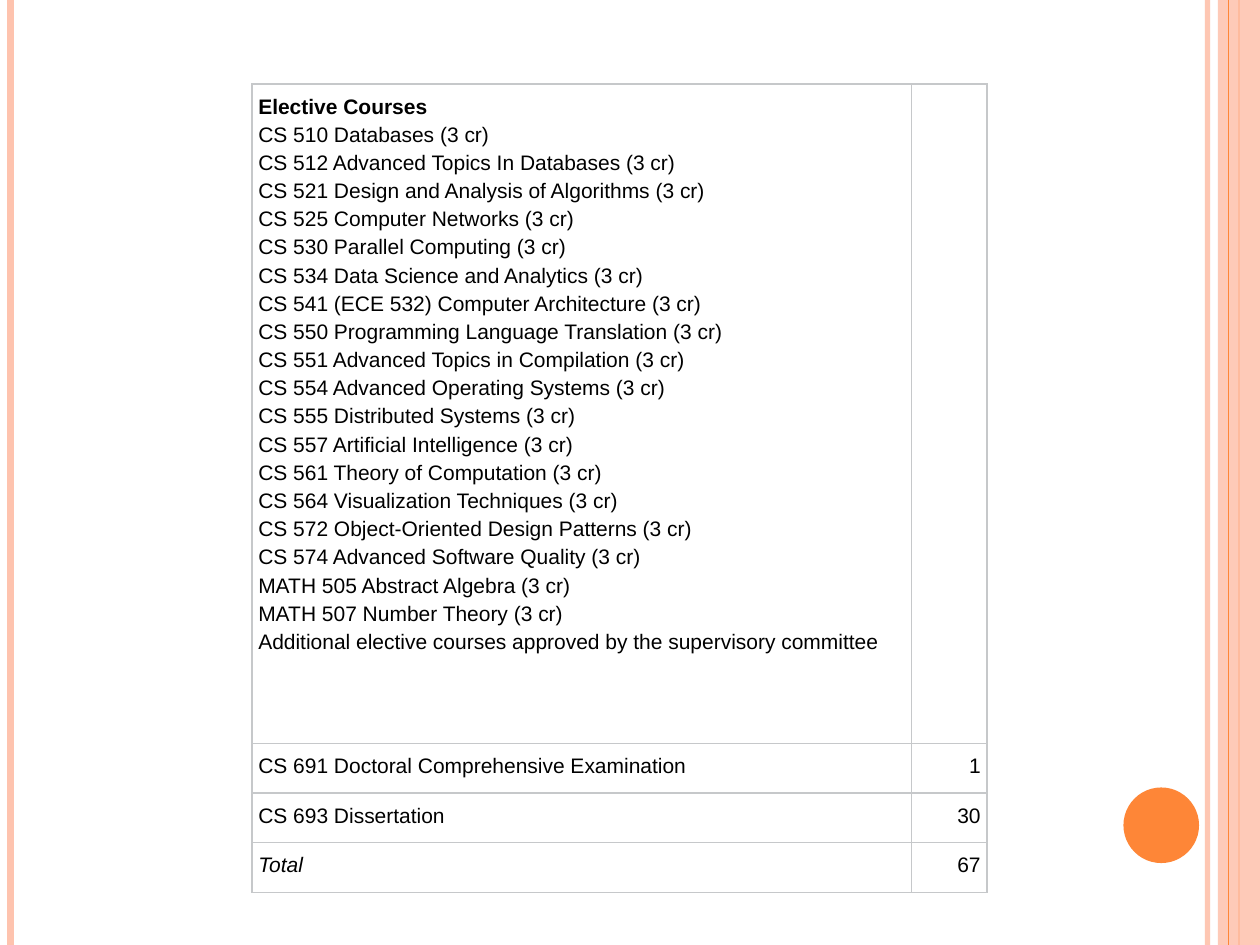
import dataclasses

import lxml.etree as etree
import pptx
import pptx.dml.color
import pptx.enum.shapes
import pptx.enum.text
import pptx.oxml.ns
import pptx.util

Pt = pptx.util.Pt
qn = pptx.oxml.ns.qn
Align = pptx.enum.text.PP_ALIGN
Shape = pptx.enum.shapes.MSO_SHAPE

WIDE, HIGH = 720, 540
ELECTIVES = [
    "CS 510 Databases",
    "CS 512 Advanced Topics In Databases",
    "CS 521 Design and Analysis of Algorithms",
    "CS 525 Computer Networks",
    "CS 530 Parallel Computing",
    "CS 534 Data Science and Analytics",
    "CS 541 (ECE 532) Computer Architecture",
    "CS 550 Programming Language Translation",
    "CS 551 Advanced Topics in Compilation",
    "CS 554 Advanced Operating Systems",
    "CS 555 Distributed Systems",
    "CS 557 Artificial Intelligence",
    "CS 561 Theory of Computation",
    "CS 564 Visualization Techniques",
    "CS 572 Object-Oriented Design Patterns",
    "CS 574 Advanced Software Quality",
    "MATH 505 Abstract Algebra",
    "MATH 507 Number Theory",
]
CLOSING = "Additional elective courses approved by the supervisory committee"
TOTALS = [
    ("CS 691 Doctoral Comprehensive Examination", "1"),
    ("CS 693 Dissertation", "30"),
    ("Total", "67"),
]


@dataclasses.dataclass
class Theme:
    accent: str = "FE8637"
    pale: str = "FEC3AE"
    grid: str = "C6C8CA"
    ink: str = "000000"
    font: str = "Arial"
    size: float = 12
    leading: float = 1.2
    inset: float = 3.6
    hang: float = 5


def rgb(code):
    return pptx.dml.color.RGBColor.from_string(code)


def fade(item, percent):
    """Set the opacity of every colour in a shape."""
    for color in item.element.xpath(".//a:srgbClr"):
        etree.SubElement(color, qn("a:alpha"), val=str(percent * 1000))


def write(para, text, theme, bold=False, italic=False, align=Align.LEFT, hang=0):
    para.alignment = align
    para.line_spacing = theme.leading
    if hang:
        props = para._p.get_or_add_pPr()
        props.set("marL", str(Pt(hang)))
        props.set("indent", str(-Pt(hang)))
    run = para.add_run()
    run.text = text
    font = run.font
    font.name, font.size = theme.font, Pt(theme.size)
    font.bold, font.italic = bold, italic
    font.color.rgb = rgb(theme.ink)


class Page:
    def __init__(self, slide, theme):
        self.slide, self.theme = slide, theme

    def rule(self, x, color, width, alpha=100):
        """Draw a vertical line over the full slide height."""
        line = self.slide.shapes.add_connector(
            pptx.enum.shapes.MSO_CONNECTOR.STRAIGHT, Pt(x), Pt(0), Pt(x), Pt(HIGH))
        line.line.color.rgb = rgb(color)
        line.line.width = Pt(width)
        etree.SubElement(line.element.spPr, qn("a:effectLst"))
        if alpha < 100:
            fade(line, alpha)

    def shape(self, kind, box, color, alpha=100):
        item = self.slide.shapes.add_shape(kind, *map(Pt, box))
        item.shadow.inherit = False
        item.fill.solid()
        item.fill.fore_color.rgb = rgb(color)
        item.line.fill.background()
        if alpha < 100:
            fade(item, alpha)

    def table(self, left, top, cols, rows):
        frame = self.slide.shapes.add_table(
            len(rows), len(cols), Pt(left), Pt(top), Pt(sum(cols)), Pt(sum(rows)))
        table = frame.table
        table.first_row = table.horz_banding = False
        for col, width in zip(table.columns, cols):
            col.width = Pt(width)
        for row, height in zip(table.rows, rows):
            row.height = Pt(height)
        for cell in table.iter_cells():
            self.frame(cell)
        return table

    def frame(self, cell):
        """Give a cell its insets, borders and clear fill."""
        inset = Pt(self.theme.inset)
        cell.margin_left = cell.margin_right = inset
        cell.margin_top = cell.margin_bottom = inset
        props = cell._tc.get_or_add_tcPr()
        for side in "LRTB":
            edge = etree.SubElement(props, qn(f"a:ln{side}"), w=str(Pt(1)))
            fill = etree.SubElement(edge, qn("a:solidFill"))
            etree.SubElement(fill, qn("a:srgbClr"), val=self.theme.grid)
        cell.fill.background()

    def text(self, cell, lines, **style):
        """Fill a cell with one paragraph for each line."""
        body = cell.text_frame
        for i, line in enumerate(lines):
            para = body.add_paragraph() if i else body.paragraphs[0]
            write(para, line, self.theme, **style)


def main():
    deck = pptx.Presentation()
    deck.slide_width, deck.slide_height = Pt(WIDE), Pt(HIGH)
    theme = Theme()
    page = Page(deck.slides.add_slide(deck.slide_layouts[6]), theme)

    page.rule(690, theme.pale, 3, alpha=93)
    page.rule(6, theme.pale, 4.5)
    page.rule(708, theme.accent, 1.5)
    page.shape(Shape.RECTANGLE, (696, 0, 24, HIGH), theme.pale, alpha=87)
    page.rule(702, theme.accent, 0.75)
    page.shape(Shape.OVAL, (642, 450, 43.2, 43.2), theme.accent)

    table = page.table(144, 48, [377, 43], [376.8] + [28.4] * len(TOTALS))
    courses = [f"{name} (3 cr)" for name in ELECTIVES]
    first = table.cell(0, 0)
    page.text(first, ["Elective Courses", *courses, CLOSING], hang=theme.hang)
    first.text_frame.paragraphs[0].runs[0].font.bold = True
    for row, (name, credits) in enumerate(TOTALS, 1):
        last = row == len(TOTALS)
        page.text(table.cell(row, 0), [name], italic=last, hang=0 if last else theme.hang)
        page.text(table.cell(row, 1), [credits], align=Align.RIGHT)

    deck.save("out.pptx")


if __name__ == "__main__":
    main()
